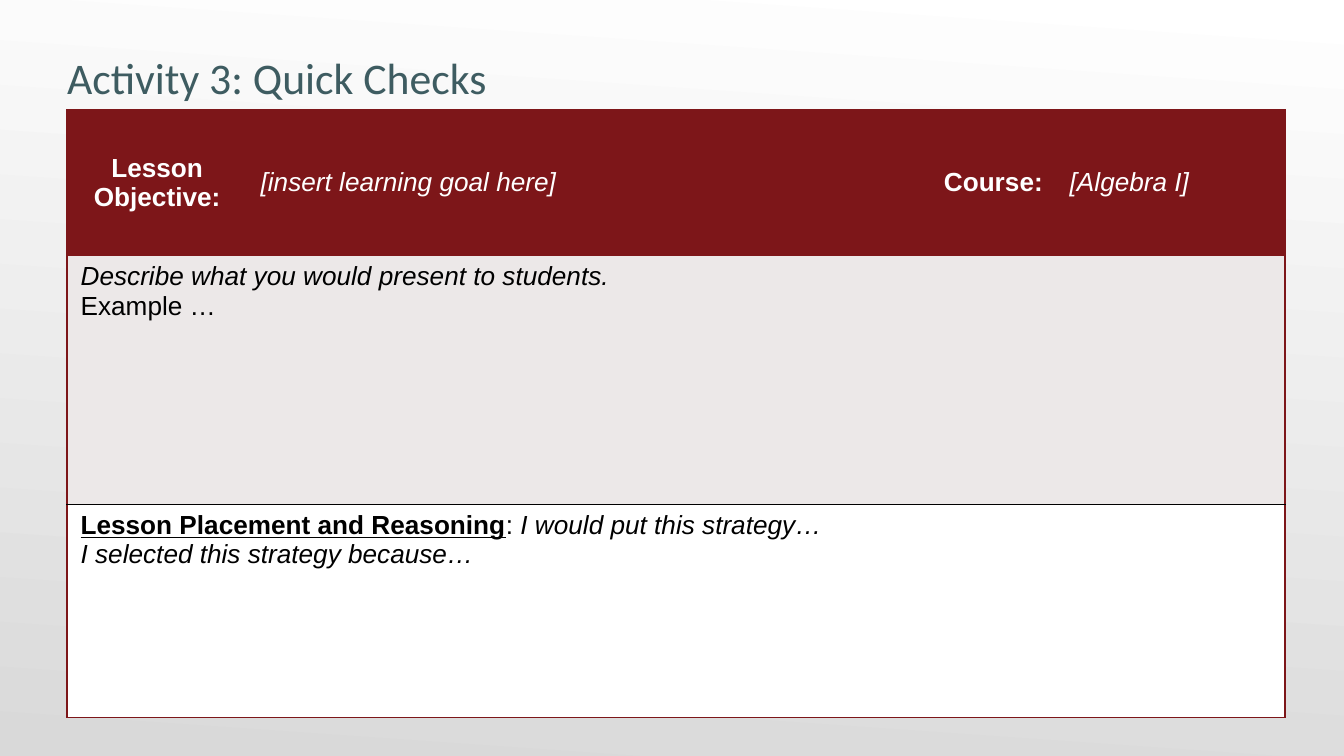
from lxml import etree
from pptx import Presentation
from pptx import util as u
from pptx.dml.color import RGBColor
from pptx.enum import text
from pptx.oxml import ns

MAROON = RGBColor(0x7D, 0x16, 0x19)
TEAL = RGBColor(0x3E, 0x5C, 0x61)
GREY = RGBColor(0xD9, 0xD9, 0xD9)
PALE = RGBColor(0xEC, 0xE8, 0xE8)
WHITE = RGBColor(0xFF, 0xFF, 0xFF)
BLACK = RGBColor(0, 0, 0)

PAGE_WIDTH = 10
PAGE_HEIGHT = PAGE_WIDTH * 9 / 16
COLUMNS = [1.34, 5, 1.02, 1.7]
ROWS = [1.08, 1.85, 1.59]
NO_STYLE = "{2D5ABB26-0587-4C30-8999-92F81FD0307C}"

# Each run is (wording, style letters): b bold, i italic, u underlined
HEADER = [
    ("Lesson Objective:", "b", text.PP_ALIGN.CENTER),
    ("[insert learning goal here]", "i", text.PP_ALIGN.LEFT),
    ("Course:", "b", text.PP_ALIGN.RIGHT),
    ("[Algebra I]", "i", text.PP_ALIGN.LEFT),
]
PRESENTATION = [
    [("Describe what you would present to students.", "i")],
    [("Example …", "")],
]
REASONING = [
    [("Lesson Placement and Reasoning", "bu"), (": ", ""),
     ("I would put this strategy…", "i")],
    [("I selected this strategy because…", "i")],
]


def set_background(page):
    fill = page.background.fill
    fill.gradient()
    fill.gradient_angle = 266
    for stop, colour in zip(fill.gradient_stops, (WHITE, GREY)):
        stop.color.rgb = colour


def add_title(page, wording):
    box = page.shapes.add_textbox(u.Inches(0.5), u.Inches(0.33), u.Inches(9), u.Inches(0.44))
    frame = box.text_frame
    frame.word_wrap = True
    frame.vertical_anchor = text.MSO_ANCHOR.BOTTOM
    frame.margin_left = frame.margin_right = frame.margin_bottom = 0
    para = frame.paragraphs[0]
    para.text = wording
    para.font.name, para.font.size = "Calibri", u.Pt(23.4)
    para.font.color.rgb = TEAL


def write_cell(cell, paragraphs, colour, align=text.PP_ALIGN.LEFT):
    frame = cell.text_frame
    for index, spans in enumerate(paragraphs):
        para = frame.paragraphs[0] if index == 0 else frame.add_paragraph()
        para.alignment = align
        para.font.name, para.font.size = "Arial", u.Pt(14)
        para.font.color.rgb = colour
        for wording, style in spans:
            span = para.add_run()
            span.text = wording
            span.font.bold = "b" in style
            span.font.italic = "i" in style
            span.font.underline = "u" in style


def set_borders(cell, borders):
    """Borders map a side (L, R, T, B, in that order) to colour and points."""
    properties = cell._tc.get_or_add_tcPr()
    for index, (side, (colour, points)) in enumerate(borders.items()):
        line = etree.Element(ns.qn("a:ln" + side), w=str(u.Pt(points)))
        fill = etree.SubElement(line, ns.qn("a:solidFill"))
        etree.SubElement(fill, ns.qn("a:srgbClr"), val=str(colour))
        properties.insert(index, line)


def add_lesson_table(page):
    frame = page.shapes.add_table(
        len(ROWS), len(COLUMNS), u.Inches(0.5), u.Inches(0.82),
        u.Inches(sum(COLUMNS)), u.Inches(sum(ROWS)))
    table = frame.table
    table._tbl.tblPr.find(ns.qn("a:tableStyleId")).text = NO_STYLE
    for column, width in zip(table.columns, COLUMNS):
        column.width = u.Inches(width)
    for row, height in zip(table.rows, ROWS):
        row.height = u.Inches(height)

    # Header row
    for column, (wording, style, align) in enumerate(HEADER):
        cell = table.cell(0, column)
        cell.vertical_anchor = text.MSO_ANCHOR.MIDDLE
        write_cell(cell, [[(wording, style)]], WHITE, align)

    # Full-width rows
    for row, paragraphs in enumerate((PRESENTATION, REASONING), start=1):
        table.cell(row, 0).merge(table.cell(row, len(COLUMNS) - 1))
        write_cell(table.cell(row, 0), paragraphs, BLACK)

    # Fills, maroon outline and a thin rule between the lower rows
    outline, rule = (MAROON, 1), (BLACK, 0.5)
    edges = [outline, outline, rule, outline]
    for row, colour in enumerate((MAROON, PALE, WHITE)):
        for column in range(len(COLUMNS)):
            cell = table.cell(row, column)
            cell.fill.solid()
            cell.fill.fore_color.rgb = colour
            borders = {}
            if column == 0:
                borders["L"] = outline
            if column == len(COLUMNS) - 1 or cell.is_merge_origin:
                borders["R"] = outline
            borders["T"], borders["B"] = edges[row], edges[row + 1]
            set_borders(cell, borders)


def main():
    deck = Presentation()
    deck.slide_width, deck.slide_height = u.Inches(PAGE_WIDTH), u.Inches(PAGE_HEIGHT)
    page = deck.slides.add_slide(deck.slide_layouts[6])
    set_background(page)
    add_title(page, "Activity 3: Quick Checks")
    add_lesson_table(page)
    deck.save("out.pptx")


if __name__ == "__main__":
    main()
